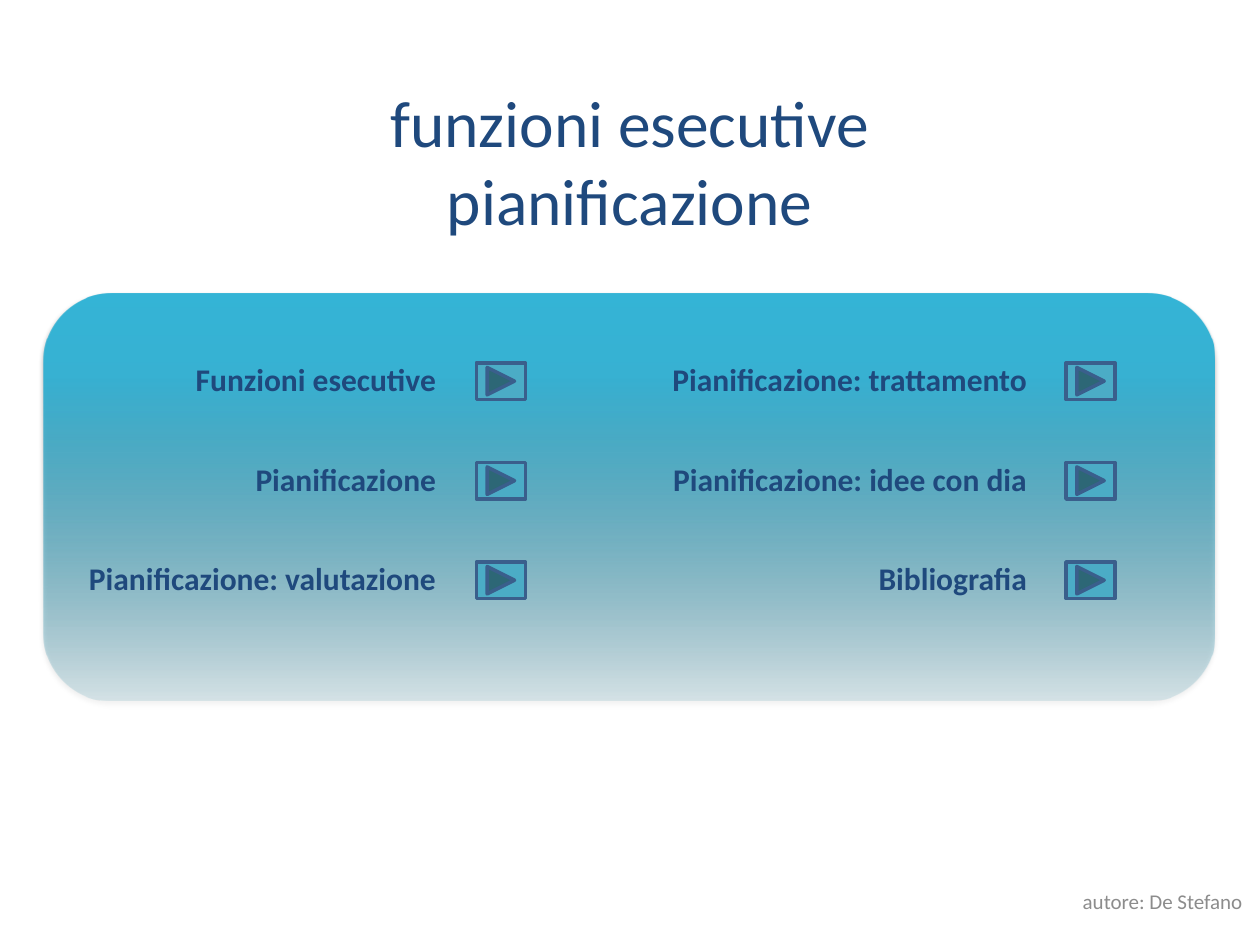
import pptx
import pptx.dml.color
import pptx.enum.shapes
import pptx.enum.text
import pptx.oxml
import pptx.util
from pptx.util import Inches

TITLE = ["funzioni esecutive", "pianificazione"]
AUTHOR = "autore: De Stefano"
MENU = [
    {"right": 3.56, "button": 3.78, "items": [
        ("Funzioni esecutive", 3.05),
        ("Pianificazione", 3.05),
        ("Pianificazione: valutazione", 3.05)]},
    {"right": 8.25, "button": 8.46, "items": [
        ("Pianificazione: trattamento", 3.05),
        ("Pianificazione: idee con dia", 3.25),
        ("Bibliografia", 2.7)]},
]
THEME = {
    "font": "Calibri", "title": 37.4, "label": 18, "author": 12,
    "text": "1F497D", "muted": "8C8C8C",
    "button": "4BACC6", "outline": "3A5F8C",
    "stops": [(0, "2A88A2", 14), (80, "37B1D2", 100), (100, "34B4D6", 100)],
}
ROW_TOP, ROW_STEP, LABEL_H = 2.81, 0.79, 0.4
BUTTON_W, BUTTON_H = 0.39, 0.29

SHAPE = pptx.enum.shapes.MSO_SHAPE
ALIGN = pptx.enum.text.PP_ALIGN
ANCHOR = pptx.enum.text.MSO_ANCHOR
NS = 'xmlns:a="http://schemas.openxmlformats.org/drawingml/2006/main"'


def rgb(name):
    return pptx.dml.color.RGBColor.from_string(THEME[name])


def add_text(s, box, lines, size, color, align, anchor=ANCHOR.TOP, bold=False):
    tf = s.shapes.add_textbox(*map(Inches, box)).text_frame
    tf.word_wrap = True
    tf.vertical_anchor = anchor
    tf.text = "\n".join(lines)
    for p in tf.paragraphs:
        p.alignment = align
        for r in p.runs:
            r.font.name = THEME["font"]
            r.font.size = pptx.util.Pt(THEME[size])
            r.font.bold = bold
            r.font.color.rgb = rgb(color)
    return tf


def add_panel(s, box):
    sp = s.shapes.add_shape(SHAPE.ROUNDED_RECTANGLE, *map(Inches, box))
    sp.line.fill.background()
    stops = "".join(
        f'<a:gs pos="{pos * 1000}"><a:srgbClr val="{color}">'
        f'<a:alpha val="{alpha * 1000}"/></a:srgbClr></a:gs>'
        for pos, color, alpha in THEME["stops"])
    grad = pptx.oxml.parse_xml(
        f'<a:gradFill {NS} rotWithShape="1"><a:gsLst>{stops}</a:gsLst>'
        '<a:lin ang="16200000" scaled="0"/></a:gradFill>')
    shadow = pptx.oxml.parse_xml(
        f'<a:effectLst {NS}><a:outerShdw blurRad="{pptx.util.Pt(3.1)}" '
        f'dist="{pptx.util.Pt(1.8)}" dir="5400000" rotWithShape="0">'
        '<a:srgbClr val="000000"><a:alpha val="35000"/></a:srgbClr>'
        '</a:outerShdw></a:effectLst>')
    props = sp.element.spPr
    props.insert(2, grad)
    props.append(shadow)


def add_button(s, left, top):
    sp = s.shapes.add_shape(
        SHAPE.ACTION_BUTTON_FORWARD_OR_NEXT,
        *map(Inches, (left, top, BUTTON_W, BUTTON_H)))
    sp.shadow.inherit = False
    sp.fill.solid()
    sp.fill.fore_color.rgb = rgb("button")
    sp.line.color.rgb = rgb("outline")
    sp.line.width = pptx.util.Pt(2)


def main():
    prs = pptx.Presentation()
    prs.slide_width, prs.slide_height = Inches(10), Inches(7.5)
    s = prs.slides.add_slide(prs.slide_layouts[6])
    add_panel(s, (0.35, 2.33, 9.29, 3.23))
    add_text(s, (0.75, 0.6, 8.5, 1.1), TITLE, "title", "text", ALIGN.CENTER)
    add_text(s, (6.79, 6.95, 3.17, 0.4), [AUTHOR], "author", "muted",
             ALIGN.RIGHT, ANCHOR.MIDDLE)
    for column in MENU:
        for row, (label, width) in enumerate(column["items"]):
            top = ROW_TOP + row * ROW_STEP
            tf = add_text(s, (column["right"] - width, top, width, LABEL_H),
                          [label], "label", "text", ALIGN.RIGHT, bold=True)
            tf.auto_size = pptx.enum.text.MSO_AUTO_SIZE.SHAPE_TO_FIT_TEXT
            add_button(s, column["button"], top + 0.07)
    prs.save("out.pptx")


if __name__ == "__main__":
    main()
